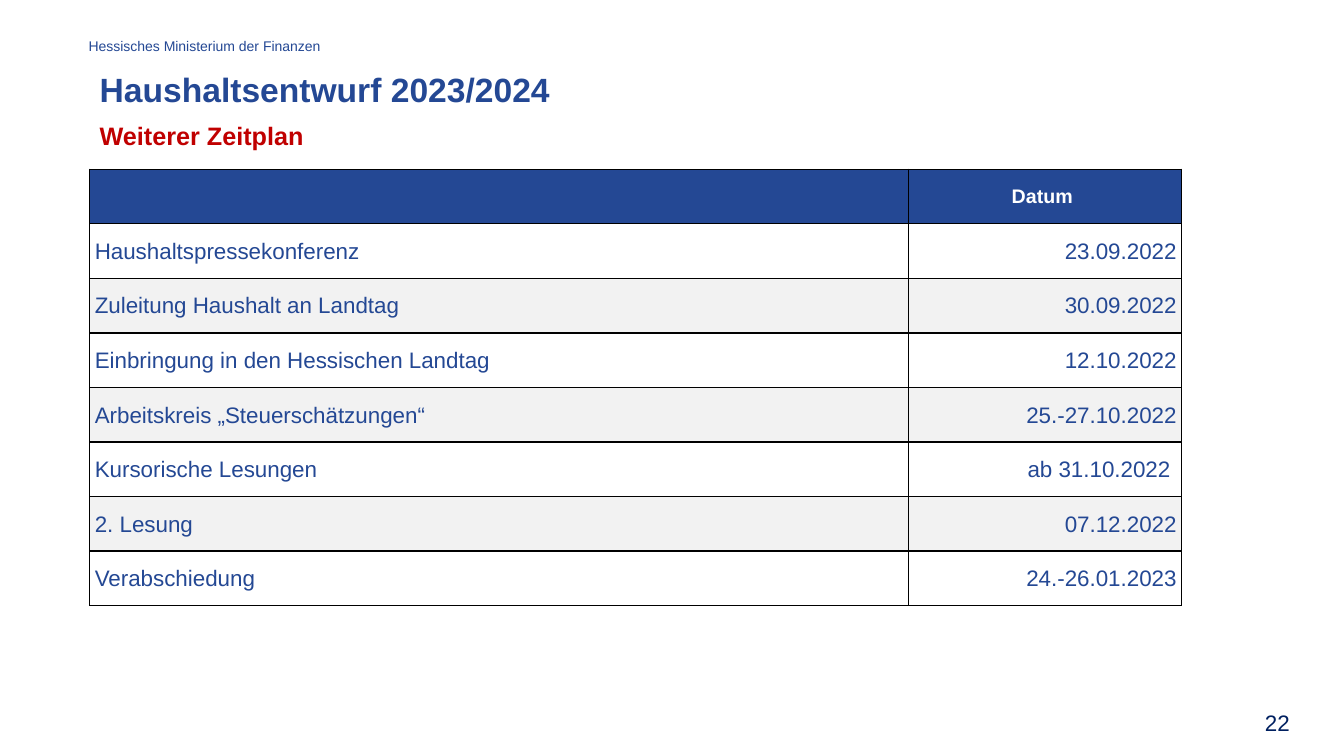
import pptx
import pptx.dml.color
import pptx.enum.text
import pptx.oxml
import pptx.oxml.ns
import pptx.util

Inches = pptx.util.Inches
ALIGN = pptx.enum.text.PP_ALIGN
MIDDLE = pptx.enum.text.MSO_ANCHOR.MIDDLE
BLUE, NAVY, RED = "244894", "002060", "C00000"
WHITE, GREY, BLACK = "FFFFFF", "F2F2F2", "000000"

SCHEDULE = [
    ("", "Datum "),
    ("Haushaltspressekonferenz", "23.09.2022"),
    ("Zuleitung Haushalt an Landtag", "30.09.2022"),
    ("Einbringung in den Hessischen Landtag", "12.10.2022"),
    ("Arbeitskreis „Steuerschätzungen“", "25.-27.10.2022"),
    ("Kursorische Lesungen", "ab 31.10.2022 "),
    ("2. Lesung", "07.12.2022"),
    ("Verabschiedung", "24.-26.01.2023"),
]


def rgb(color):
    return pptx.dml.color.RGBColor.from_string(color)


def set_attrs(obj, values):
    for name, value in values.items():
        setattr(obj, name, value)


def write(p, text, size, color, bold=False, align=ALIGN.LEFT):
    p.alignment = align
    r = p.add_run()
    r.text = text
    set_attrs(r.font, {"name": "Arial", "size": pptx.util.Pt(size), "bold": bold})
    r.font.color.rgb = rgb(color)


def add_text(s, box, text, size, color, **style):
    tf = s.shapes.add_textbox(*map(Inches, box)).text_frame
    set_attrs(tf, {"word_wrap": True, "vertical_anchor": MIDDLE})
    write(tf.paragraphs[0], text, size, color, **style)


def add_borders(cell, color, width):
    tc_pr = cell._tc.get_or_add_tcPr()
    for side in "LRTB":
        tc_pr.append(pptx.oxml.parse_xml(
            f'<a:ln{side} {pptx.oxml.ns.nsdecls("a")} w="{pptx.util.Pt(width)}">'
            f'<a:solidFill><a:srgbClr val="{color}"/></a:solidFill></a:ln{side}>'))


def fill_cell(cell, text, fill, size, color, **style):
    set_attrs(cell, {
        "margin_left": Inches(0.05), "margin_right": Inches(0.05),
        "margin_top": 0, "margin_bottom": 0, "vertical_anchor": MIDDLE,
    })
    add_borders(cell, BLACK, 1)
    cell.fill.solid()
    cell.fill.fore_color.rgb = rgb(fill)
    p = cell.text_frame.paragraphs[0]
    p.line_spacing = 1.05
    if text:
        write(p, text, size, color, **style)


def add_schedule(s, box, widths, rows):
    table = s.shapes.add_table(len(rows), len(widths), *map(Inches, box)).table
    for col, width in zip(table.columns, widths):
        col.width = Inches(width)
    for i, row in enumerate(rows):
        for j, text in enumerate(row):
            cell = table.cell(i, j)
            if i == 0:
                fill_cell(cell, text, BLUE, 14, WHITE, bold=True, align=ALIGN.CENTER)
            else:
                fill_cell(cell, text, WHITE if i % 2 else GREY, 16, BLUE,
                          align=ALIGN.RIGHT if j else ALIGN.LEFT)


def main():
    prs = pptx.Presentation()
    set_attrs(prs, {"slide_width": Inches(13.33), "slide_height": Inches(7.5)})
    s = prs.slides.add_slide(prs.slide_layouts[6])
    add_text(s, (0.78, 0.32, 6.33, 0.27), "Hessisches Ministerium der Finanzen", 10, BLUE)
    add_text(s, (0.89, 0.62, 7.77, 0.52), "Haushaltsentwurf 2023/2024", 24, BLUE, bold=True)
    add_text(s, (0.89, 1.15, 8.79, 0.39), "Weiterer Zeitplan", 18, RED, bold=True)
    add_schedule(s, (0.89, 1.68, 10.83, 4.33), (8.12, 2.71), SCHEDULE)
    add_text(s, (11.39, 7, 1.5, 0.33), "22", 16, NAVY, align=ALIGN.RIGHT)
    prs.save("out.pptx")


if __name__ == "__main__":
    main()
